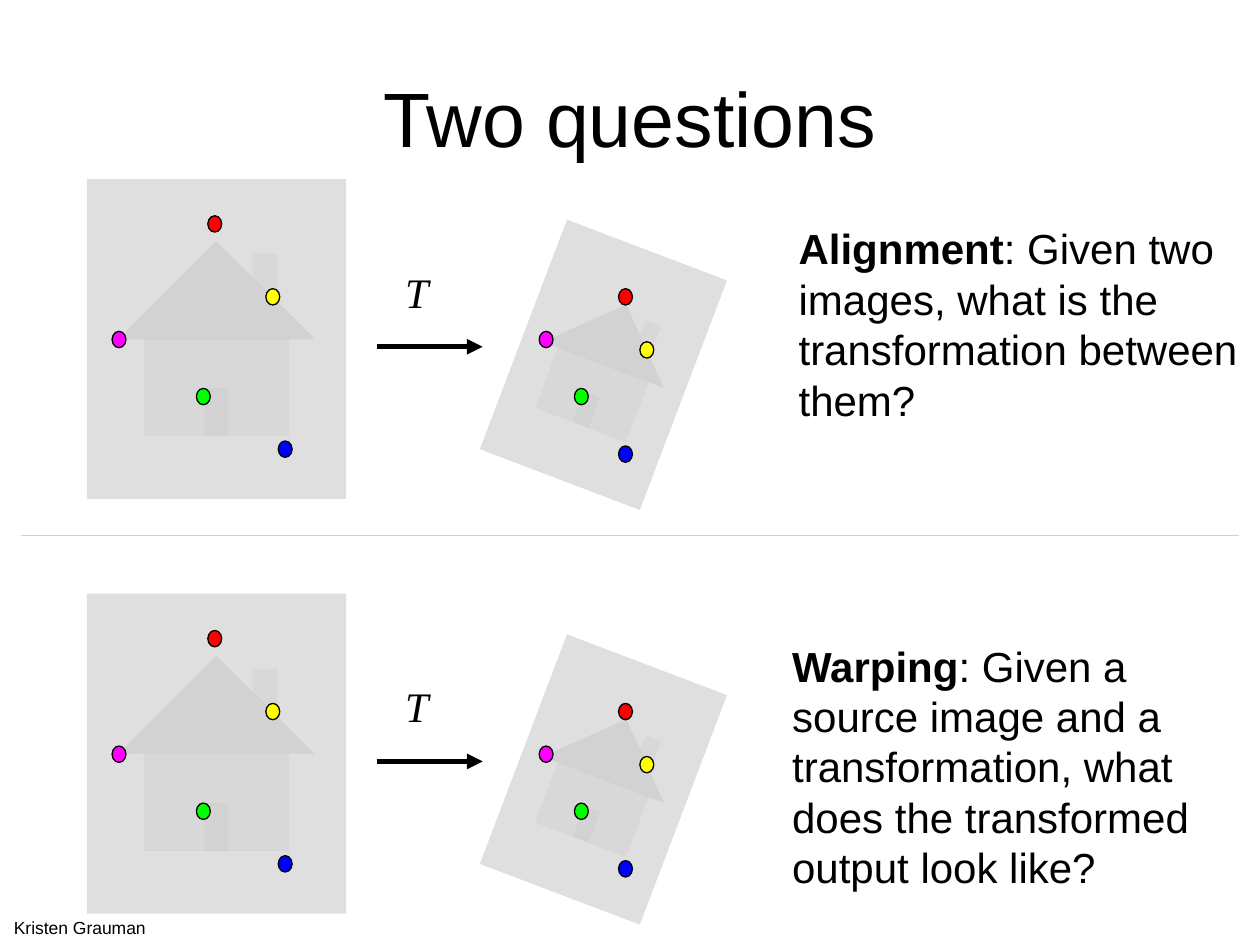
import pptx
import pptx.dml.color
import pptx.enum.shapes
import pptx.enum.text
import pptx.oxml
import pptx.oxml.ns
import pptx.util

Cm = pptx.util.Cm
Pt = pptx.util.Pt
RGB = pptx.dml.color.RGBColor
KIND = pptx.enum.shapes.MSO_SHAPE
FIT = pptx.enum.text.MSO_AUTO_SIZE

BLACK = RGB(0x00, 0x00, 0x00)
GREY = RGB(0x80, 0x80, 0x80)
RULE = RGB(0xB6, 0xDC, 0xDF)
RED = RGB(0xFF, 0x00, 0x00)
BLUE = RGB(0x00, 0x00, 0xFF)
GREEN = RGB(0x00, 0xFF, 0x00)
PINK = RGB(0xFF, 0x00, 0xFF)
YELLOW = RGB(0xFF, 0xFF, 0x00)
HUES = (RED, BLUE, GREEN, PINK, YELLOW)

SOURCE = ((2.44, 0.74), (3.86, 5.28), (2.21, 4.22), (0.51, 3.07), (3.61, 2.21))
TARGET = ((10.72, 2.21), (10.72, 5.38), (9.83, 4.22), (9.12, 3.07), (11.15, 3.28))
ROWS = (
    (3.61, (15.85, 4.37, 9.55, 4.37), "Alignment",
     ": Given two images, what is the transformation between them?"),
    (11.97, (15.72, 12.78, 9.14, 5.38), "Warping",
     ": Given a source image and a transformation, what does the transformed output look like?"),
)


def node(tag, **attrs):
    """Make a drawing element with the given attributes."""
    item = pptx.oxml.parse_xml(f"<a:{tag} {pptx.oxml.ns.nsdecls('a')}/>")
    for name, value in attrs.items():
        item.set(name, value)
    return item


def add_line(slide, start, end, color, width, arrow=False):
    """Draw a straight line, with an arrowhead if asked."""
    line = slide.shapes.add_connector(
        pptx.enum.shapes.MSO_CONNECTOR.STRAIGHT, *map(Cm, start + end))
    line.line.color.rgb = color
    line.line.width = Pt(width)
    props = line._element.spPr
    if arrow:
        props.find(pptx.oxml.ns.qn("a:ln")).append(node("tailEnd", type="triangle"))
    props.append(node("effectLst"))


def add_shape(slide, kind, box, color):
    """Place a filled preset shape without a shadow."""
    shape = slide.shapes.add_shape(kind, *map(Cm, box))
    shape.shadow.inherit = False
    shape.fill.solid()
    shape.fill.fore_color.rgb = color
    return shape


def add_house(slide, box, turn, dots, left, top):
    """Draw a see-through house and its colored points."""
    house = add_shape(slide, KIND.ACTION_BUTTON_HOME, box, GREY)
    house.line.fill.background()
    house.rotation = turn
    tint = house._element.spPr.find(".//" + pptx.oxml.ns.qn("a:srgbClr"))
    tint.append(node("alpha", val="25000"))
    for (x, y), hue in zip(dots, HUES):
        dot = add_shape(slide, KIND.OVAL, (left + x, top + y, 0.28, 0.33), hue)
        dot.line.color.rgb = BLACK
        dot.line.width = Pt(0.75)


def add_text(slide, box, words, size, face="Arial", wrap=True):
    """Place a text box and return its paragraph."""
    frame = slide.shapes.add_textbox(*map(Cm, box)).text_frame
    frame.word_wrap = wrap
    frame.auto_size = FIT.SHAPE_TO_FIT_TEXT
    para = frame.paragraphs[0]
    para.text = words
    para.font.name = face
    para.font.size = Pt(size)
    para.font.color.rgb = BLACK
    return para


def add_scene(slide, left, top):
    """Draw the source house, the arrow T and the turned house."""
    add_line(slide, (left + 5.84, top + 3.38), (left + 7.98, top + 3.38), BLACK, 3, True)
    add_house(slide, (left, top, 5.23, 6.45), 0, SOURCE, left, top)
    add_house(slide, (left + 8.69, top + 1.27, 3.45, 4.95), 20.8, TARGET, left, top)
    mark = add_text(slide, (left + 6.17, top + 1.63, 0.99, 1.27), "T", 24,
                    "Times New Roman", False)
    mark.font.italic = True


def add_query(slide, box, term, rest):
    """Write a question that opens with a bold term."""
    para = add_text(slide, box, term, 24)
    para.runs[0].font.bold = True
    para.add_run().text = rest


def add_title(slide, box, words):
    """Move and format the title placeholder."""
    title = slide.shapes.title
    title.left, title.top, title.width, title.height = map(Cm, box)
    frame = title.text_frame
    frame.text = words
    frame.vertical_anchor = pptx.enum.text.MSO_ANCHOR.MIDDLE
    para = frame.paragraphs[0]
    para.alignment = pptx.enum.text.PP_ALIGN.CENTER
    para.font.name = "Arial"
    para.font.size = Pt(44)
    para.font.color.rgb = BLACK


def main():
    """Build the slide and save it."""
    deck = pptx.Presentation()
    deck.slide_width, deck.slide_height = Cm(25.4), Cm(19.05)
    slide = deck.slides.add_slide(deck.slide_layouts.get_by_name("Title Only"))
    add_title(slide, (1.27, 0.76, 22.86, 3.18), "Two questions")
    for top, box, term, rest in ROWS:
        add_scene(slide, 1.75, top)
        add_query(slide, box, term, rest)
    add_line(slide, (0.43, 10.8), (24.97, 10.8), RULE, 0.75)
    add_text(slide, (0.03, 18.36, 4.39, 0.69), "Kristen Grauman", 10)
    deck.save("out.pptx")


if __name__ == "__main__":
    main()
